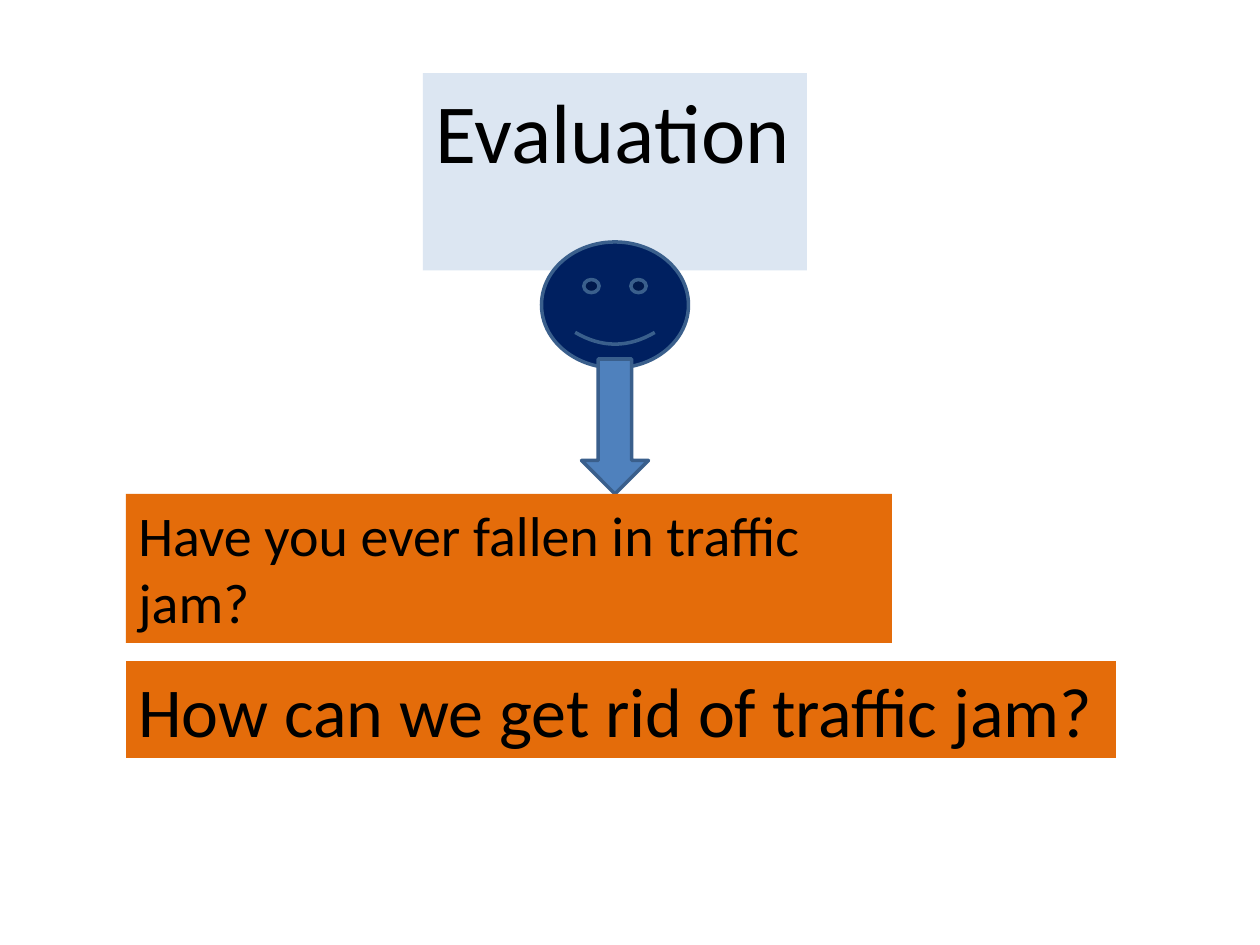
"""Build the Evaluation slide: a title, a smiley pointing down, and two questions."""
from pptx import Presentation
from pptx.dml.color import RGBColor
from pptx.enum.shapes import MSO_SHAPE
from pptx.enum.text import MSO_ANCHOR, MSO_AUTO_SIZE, PP_ALIGN
from pptx.util import Emu, Pt

SMILEY, ARROW = MSO_SHAPE.SMILEY_FACE, MSO_SHAPE.DOWN_ARROW
TOP, LEFT = MSO_ANCHOR.TOP, PP_ALIGN.LEFT
GROW = MSO_AUTO_SIZE.SHAPE_TO_FIT_TEXT
TITLE_ONLY = 5

THEME = {
    "font": "Calibri", "text": "000000", "title_fill": "DCE6F2",
    "question_fill": "E46C0A", "face": "002060", "arrow": "4F81BD",
    "outline": "3A5F8C", "outline_pt": 2,
    "title_pt": 48, "small_pt": 32, "large_pt": 40,
}
TITLE = "Evaluation"
TITLE_BOX = (73, 384, 115)
FIGURE = [
    (SMILEY, "face", 242, 147, 126),
    (ARROW, "arrow", 359, 67, 135),
]
QUESTIONS = [
    ("Have you ever fallen in traffic jam?", "small_pt", 494, 766, 149, True),
    ("How can we get rid of traffic jam?", "large_pt", 661, 990, 97, False),
]
CENTER, MARGIN = 615, 126


def px(n):
    return Emu(round(n * 914400 / 126))


def color(key):
    return RGBColor.from_string(THEME[key])


def fill(sp, key):
    sp.fill.solid()
    sp.fill.fore_color.rgb = color(key)


def place(sp, left, top, width, height):
    sp.left, sp.top, sp.width, sp.height = map(px, (left, top, width, height))


def write(sp, text, size, wrap):
    tf = sp.text_frame
    tf.text = text
    tf.word_wrap = wrap
    tf.auto_size = GROW
    tf.vertical_anchor = TOP
    p = tf.paragraphs[0]
    p.alignment = LEFT
    p.font.name = THEME["font"]
    p.font.size = Pt(THEME[size])
    p.font.color.rgb = color("text")


def main():
    prs = Presentation()
    prs.slide_width, prs.slide_height = px(1260), px(945)
    s = prs.slides.add_slide(prs.slide_layouts[TITLE_ONLY])

    top, width, height = TITLE_BOX
    title = s.shapes.title
    place(title, CENTER - width / 2, top, width, height)
    fill(title, "title_fill")
    write(title, TITLE, "title_pt", False)

    for kind, key, top, width, height in FIGURE:
        sp = s.shapes.add_shape(kind, px(CENTER - width / 2), px(top), px(width), px(height))
        sp.shadow.inherit = False
        fill(sp, key)
        sp.line.color.rgb = color("outline")
        sp.line.width = Pt(THEME["outline_pt"])

    for text, size, top, width, height, wrap in QUESTIONS:
        sp = s.shapes.add_textbox(px(MARGIN), px(top), px(width), px(height))
        fill(sp, "question_fill")
        write(sp, text, size, wrap)

    prs.save("out.pptx")


if __name__ == "__main__":
    main()
